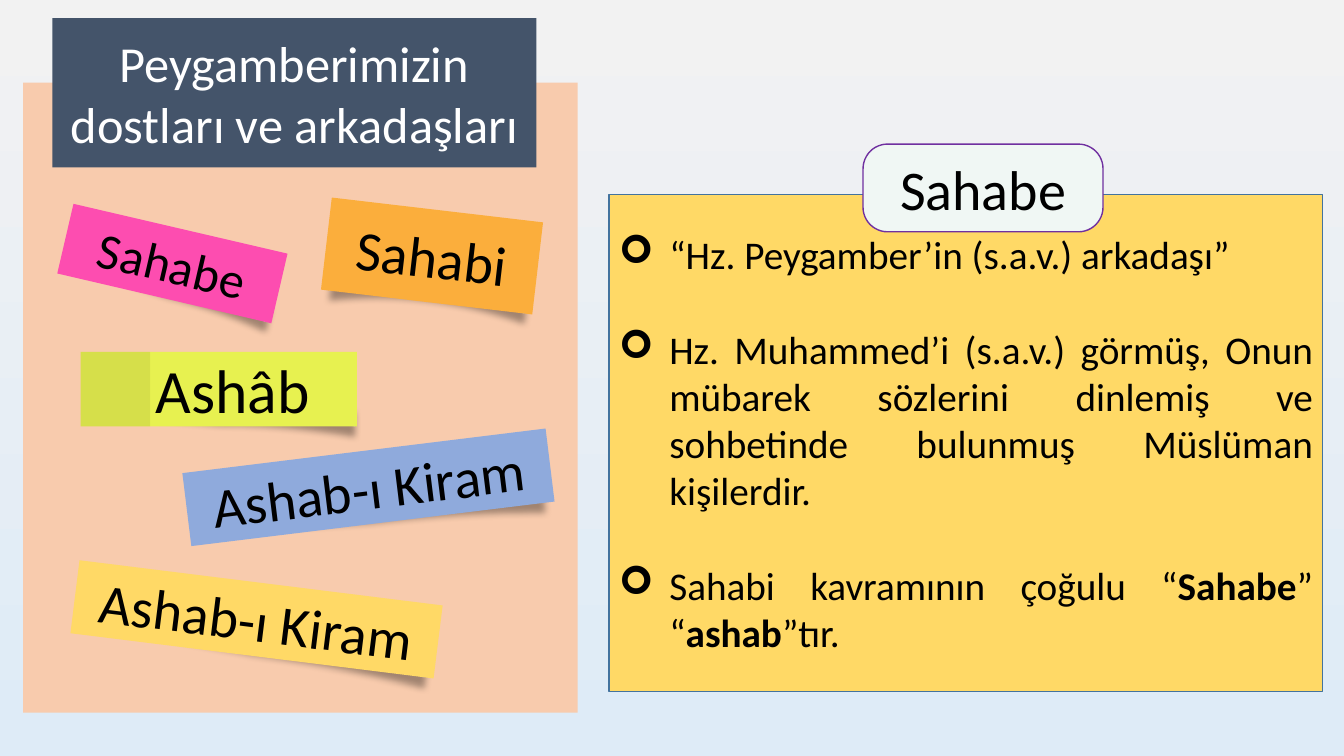
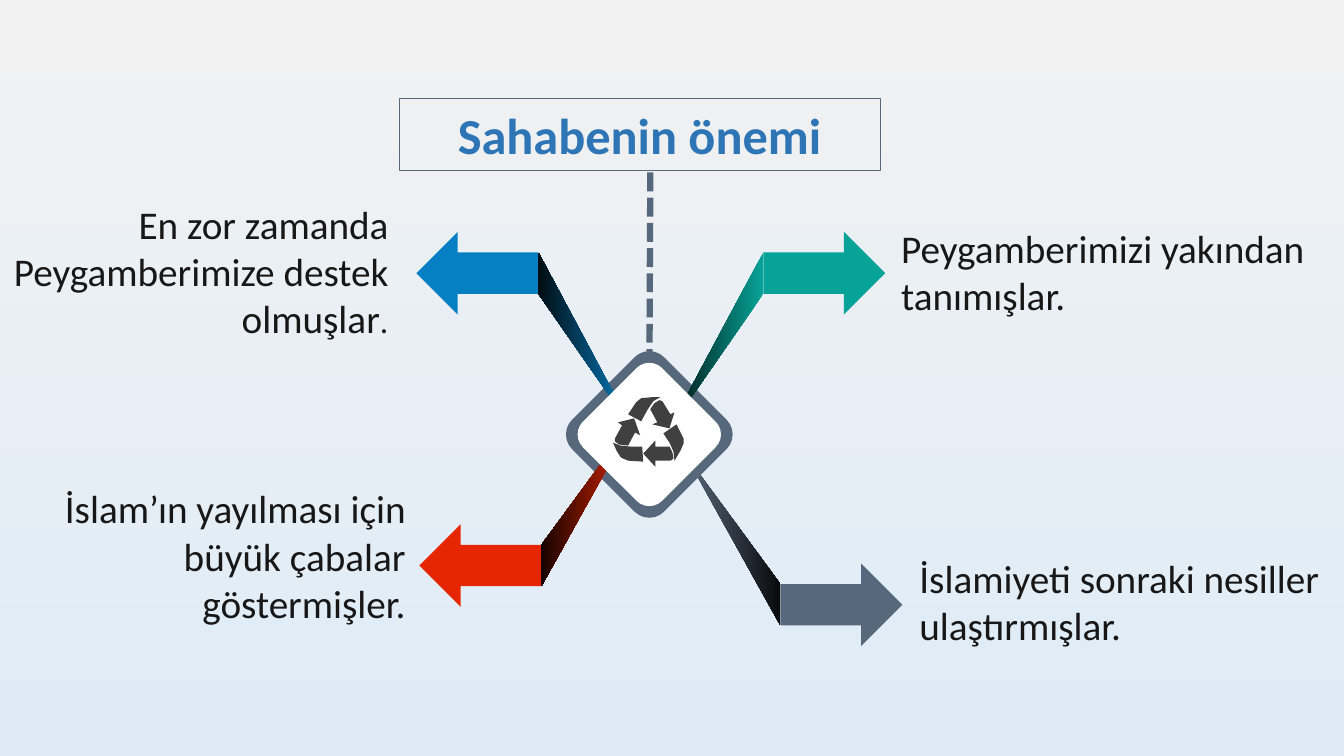
from math import cos, radians, sin

from lxml.etree import SubElement
from pptx import Presentation
from pptx.dml.color import RGBColor
from pptx.enum.dml import MSO_LINE
from pptx.enum.shapes import MSO_CONNECTOR, MSO_SHAPE as Kind
from pptx.enum.text import MSO_ANCHOR as Anchor, MSO_AUTO_SIZE as Auto, PP_ALIGN as Align
from pptx.oxml.ns import qn
from pptx.util import Inches, Pt

FONT = "Calibri"
HEX = {
    "sky": "F2F2F2", "base": "DEEBF7", "black": "000000", "white": "FFFFFF",
    "peach": "F8CBAD", "navy": "44546A", "curl": "D0CECE", "pink": "FD4DB0",
    "orange": "FBAE3C", "lime": "E7F150", "blue": "8FAADC", "gold": "FFD966",
    "edge": "43739E", "mint": "F0F7F4", "violet": "7030A0", "slate": "57687C",
    "soot": "090A0C", "teal": "07A398", "pine": "01100F", "azure": "0680C3",
    "night": "010D13", "red": "E62601", "rust": "170400", "coal": "404040",
    "mist": "EEF0F2", "head": "2E75B6", "ink": "181717",
}

# Slide 1: text, size, box, turn, colour, curl inset, both corners lifted, left inset
NOTES = [
    ("Sahabe", 36, (0.62, 2.26, 2.18, 0.71), 13.1, "pink", 0.06, False, 0.1),
    ("Sahabi", 40, (3.23, 2.08, 2.11, 0.92), 6.7, "orange", 0.08, True, 0.1),
    ("Ashâb", 44, (0.8, 3.49, 2.74, 0.74), 0, "lime", 0.02, False, 0.38),
    ("Ashab-ı Kiram", 40, (1.84, 4.47, 3.63, 0.73), -7, "blue", 0.1, False, 0.1),
    ("Ashab-ı Kiram", 40, (0.73, 5.78, 3.63, 0.73), 7.1, "gold", 0.1, False, 0.1),
]
# Each point is a list of (text, bold) runs
POINTS = [
    [("“Hz. Peygamber’in (s.a.v.) arkadaşı”", False)],
    [("Hz. Muhammed’i (s.a.v.) görmüş, Onun mübarek sözlerini dinlemiş ve "
      "sohbetinde bulunmuş Müslüman kişilerdir.", False)],
    [("Sahabi kavramının çoğulu “", False), ("Sahabe", True), ("” “", False),
     ("ashab", True), ("”tır.", False)],
]

# Slide 2: arrow left and top, side, rise of the ribbon, colours, gradient angle
ARMS = [
    (7.74, 5.59, 1, -1.5, "slate", "soot", 0),
    (7.57, 2.3, 1, 1.57, "teal", "pine", 180),
    (4.13, 2.3, -1, 1.57, "azure", "night", 180),
    (4.16, 5.2, -1, -1.5, "red", "rust", 180),
]
# Box, alignment, (text, size) runs
LABELS = [
    ((0, 4.76, 4.12, 1.51), Align.RIGHT,
     [("İslam’ın yayılması için büyük çabalar göstermişler.", 28)]),
    ((8.84, 2.18, 4.26, 1.04), Align.LEFT, [("Peygamberimizi yakından tanımışlar.", 28)]),
    ((0, 1.94, 3.95, 1.51), Align.RIGHT,
     [("En zor zamanda Peygamberimize destek olmuşlar", 28), (".", 24)]),
    ((9.02, 5.45, 4.31, 1.04), Align.LEFT,
     [("İslamiyeti sonraki nesiller ulaştırmışlar.", 28)]),
]
ICON = [
    [(6.08, 4.39), (6.15, 4.42), (6.25, 4.43), (6.37, 4.43), (6.38, 4.58),
     (6.23, 4.57), (6.16, 4.54), (6.12, 4.48)],
    [(6.5, 4.37), (6.5, 4.43), (6.64, 4.43), (6.67, 4.49), (6.68, 4.55),
     (6.65, 4.57), (6.5, 4.57), (6.5, 4.63), (6.38, 4.5)],
    [(6.71, 4.21), (6.78, 4.35), (6.78, 4.4), (6.75, 4.47), (6.69, 4.57),
     (6.68, 4.48), (6.64, 4.39), (6.58, 4.3)],
    [(6.29, 4.15), (6.35, 4.32), (6.3, 4.29), (6.23, 4.42), (6.14, 4.41),
     (6.1, 4.38), (6.1, 4.35), (6.17, 4.22), (6.13, 4.19)],
    [(6.54, 3.97), (6.57, 3.98), (6.65, 4.11), (6.69, 4.09), (6.64, 4.25),
     (6.47, 4.21), (6.52, 4.19), (6.45, 4.06), (6.49, 4.0)],
    [(6.47, 3.94), (6.55, 3.94), (6.48, 3.98), (6.42, 4.07), (6.36, 4.18),
     (6.23, 4.11), (6.31, 3.99), (6.36, 3.95)],
]


def rgb(name):
    return RGBColor.from_string(HEX[name])


def blend(fill, first, last, angle):
    fill.gradient()
    fill.gradient_angle = angle
    for stop, name in zip(fill.gradient_stops, (first, last)):
        stop.color.rgb = rgb(name)


def paint(shape, fill=None, line=None, width=1):
    if fill:
        shape.fill.solid()
        shape.fill.fore_color.rgb = rgb(fill)
    if line:
        shape.line.color.rgb = rgb(line)
        shape.line.width = Pt(width)
    else:
        shape.line.fill.background()
    shape.shadow.inherit = False
    return shape


def add(slide, kind, box, fill, line=None, turn=0):
    shape = slide.shapes.add_shape(kind, *map(Inches, box))
    shape.rotation = turn
    return paint(shape, fill, line)


def trace(slide, loops, fill=None):
    loops = [[(Inches(x), Inches(y)) for x, y in loop] for loop in loops]
    pen = slide.shapes.build_freeform(*loops[0][0], scale=1.0)
    for i, loop in enumerate(loops):
        if i:
            pen.move_to(*loop[0])
        pen.add_line_segments(loop[1:], close=True)
    return paint(pen.convert_to_shape(), fill)


def say(par, text, size, color="black", bold=False):
    run = par.add_run()
    run.text = text
    font = run.font
    font.name, font.size, font.bold = FONT, Pt(size), bold
    font.color.rgb = rgb(color)


def label(shape, text, size, color="black", bold=False):
    frame = shape.text_frame
    frame.word_wrap = True
    frame.vertical_anchor = Anchor.MIDDLE
    par = frame.paragraphs[0]
    par.alignment = Align.CENTER
    say(par, text, size, color, bold)


def head(slide, text, box, fill, color, line=None, bold=False):
    title = slide.shapes.title
    title.left, title.top, title.width, title.height = map(Inches, box)
    paint(title, fill, line, 0.75)
    label(title, text, 36, color, bold)
    title.text_frame.auto_size = Auto.NONE
    slide.shapes._spTree.append(title._element)  # bring to front


def curl(slide, box, turn, inset, both):
    """Strip under a note whose shadow shows at the lifted corners."""
    x, y, w, h = box
    side, low = w / 2 - inset, h / 2
    last = -10 if both else 0
    arch = [(side * i / 10, low - 0.11 * (1 - i * i / 100)) for i in range(10, last - 1, -1)]
    strip = [(-side, low - 0.23), (side, low - 0.23)] + arch
    c, s = cos(radians(turn)), sin(radians(turn))
    mid, deep = x + w / 2, y + h / 2
    shape = trace(slide, [[(mid + a * c - b * s, deep + a * s + b * c) for a, b in strip]], "curl")
    glow = SubElement(shape._element.spPr.find(qn("a:effectLst")), qn("a:outerShdw"),
                      blurRad=str(Pt(5)), dist=str(Pt(7)), dir="5400000", rotWithShape="0")
    tint = SubElement(glow, qn("a:srgbClr"), val=HEX["black"])
    SubElement(tint, qn("a:alpha"), val="34000")


def friends(slide):
    add(slide, Kind.RECTANGLE, (0.23, 0.82, 5.5, 6.25), "peach")
    head(slide, "Peygamberimizin dostları ve arkadaşları", (0.52, 0.18, 4.8, 1.48),
         "navy", "white")

    # Sticky notes
    for text, size, box, turn, color, inset, both, left in NOTES:
        curl(slide, box, turn, inset, both)
        note = add(slide, Kind.RECTANGLE, box, color, turn=turn)
        note.text_frame.margin_left = Inches(left)
        label(note, text, size)
    tape = add(slide, Kind.RECTANGLE, (0.8, 3.49, 0.69, 0.74), "black")
    tint = tape._element.spPr.find(qn("a:solidFill"))[0]
    SubElement(tint, qn("a:alpha"), val="7000")

    # Definition panel
    panel = add(slide, Kind.RECTANGLE, (6.04, 1.93, 7.08, 4.93), "gold", "edge")
    frame = panel.text_frame
    frame.word_wrap = True
    frame.vertical_anchor = Anchor.MIDDLE
    for i, runs in enumerate(POINTS):
        par = frame.add_paragraph() if i else frame.paragraphs[0]
        par.alignment = Align.JUSTIFY
        par.space_before = Pt(34 if i else 0)
        props = par._p.get_or_add_pPr()
        props.set("marL", str(Inches(0.5)))
        props.set("indent", str(Inches(-0.5)))
        SubElement(props, qn("a:buFont"), typeface="Wingdings")
        SubElement(props, qn("a:buChar"), char="➢")
        for text, bold in runs:
            say(par, text, 28, bold=bold)
    badge = add(slide, Kind.ROUNDED_RECTANGLE, (8.56, 1.43, 2.38, 0.87), "mint", "violet")
    badge.adjustments[0] = 0.28
    label(badge, "Sahabe", 40)


def arm(slide, x, y, side, rise, color, dark, angle):
    wide, high = 1.21, 0.82
    kind = Kind.RIGHT_ARROW if side > 0 else Kind.LEFT_ARROW
    add(slide, kind, (x, y, wide, high), color)
    tail = x if side > 0 else x + wide
    mid = y + high / 2
    ribbon = trace(slide, [[(tail, mid - high / 4), (tail - side * 0.95, mid + rise),
                            (tail, mid + high / 4)]])
    blend(ribbon.fill, color, dark, angle)


def gem(slide, size, fill):
    box = (6.44 - size / 2, 4.31 - size / 2, size, size)
    add(slide, Kind.ROUNDED_RECTANGLE, box, fill, turn=315).adjustments[0] = 0.16


def worth(slide):
    # Hub and arms
    arm(slide, *ARMS[0])
    stem = slide.shapes.add_connector(
        MSO_CONNECTOR.STRAIGHT, *map(Inches, (6.45, 1.71, 6.44, 3.92)))
    stem.line.color.rgb = rgb("slate")
    stem.line.width = Pt(4.5)
    stem.line.dash_style = MSO_LINE.SQUARE_DOT
    SubElement(stem.line._get_or_add_ln(), qn("a:tailEnd"), type="triangle")
    SubElement(stem._element.spPr, qn("a:effectLst"))
    gem(slide, 1.29, "slate")
    for item in ARMS[1:]:
        arm(slide, *item)
    gem(slide, 1.11, "white")
    trace(slide, ICON, "coal")

    head(slide, "Sahabenin önemi", (3.96, 0.98, 4.77, 0.71), "mist", "head", "slate", True)

    # Arm texts
    for box, align, runs in LABELS:
        frame = slide.shapes.add_textbox(*map(Inches, box)).text_frame
        frame.word_wrap = True
        par = frame.paragraphs[0]
        par.alignment = align
        for text, size in runs:
            say(par, text, size, "ink")


def main():
    deck = Presentation()
    deck.slide_width, deck.slide_height = Inches(13.33), Inches(7.5)
    blend(deck.slide_master.background.fill, "sky", "base", 270)
    for build in (friends, worth):
        build(deck.slides.add_slide(deck.slide_layouts[5]))
    deck.save("out.pptx")


if __name__ == "__main__":
    main()
